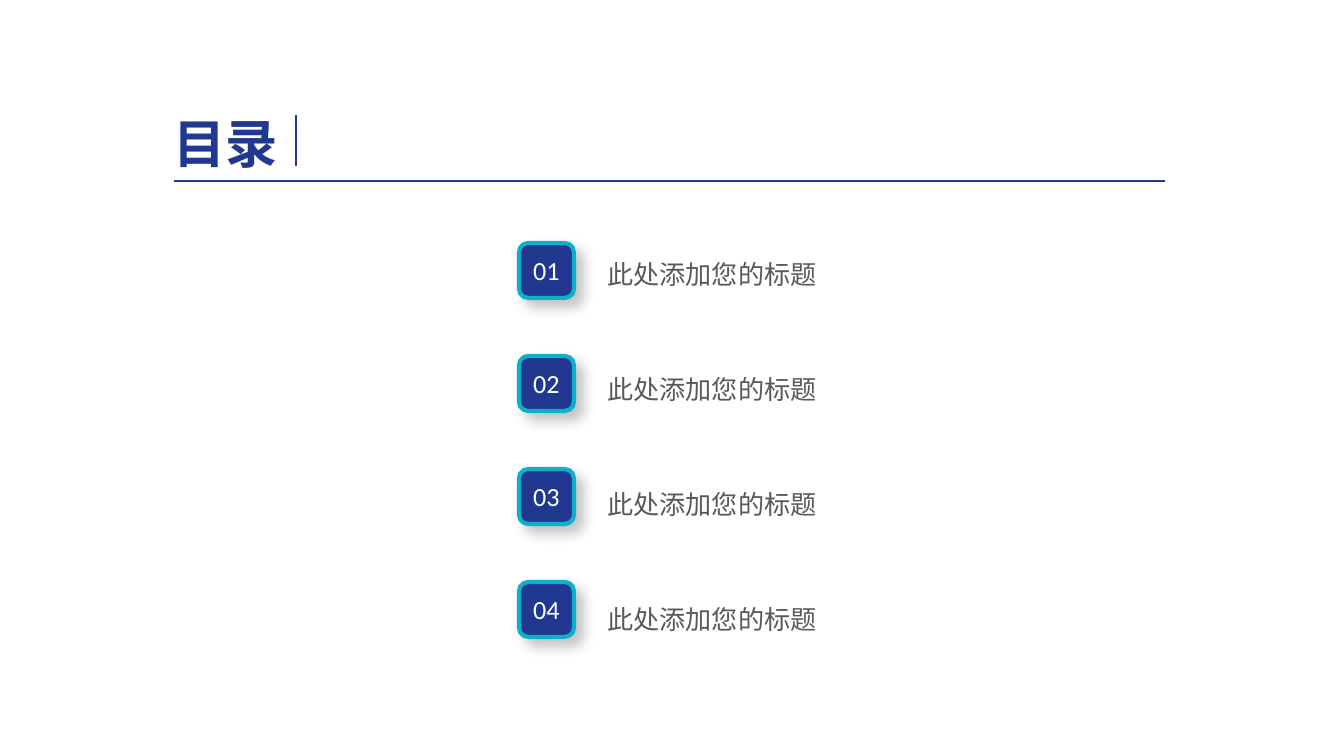
import lxml.etree
import pptx
import pptx.dml.color
import pptx.enum.shapes
import pptx.enum.text
import pptx.oxml.ns
import pptx.util

NAVY = pptx.dml.color.RGBColor(0x20, 0x38, 0x8F)
TEAL = pptx.dml.color.RGBColor(0x0C, 0xB1, 0xC9)
GRAY = pptx.dml.color.RGBColor(0x59, 0x59, 0x59)
WHITE = pptx.dml.color.RGBColor(0xFF, 0xFF, 0xFF)
LATIN_FONT = "Calibri"
CHINESE_FONT = "Noto Sans CJK SC"
EMU_PER_PX = 914400 / 134.4


def px(length):
    return pptx.util.Emu(round(length * EMU_PER_PX))


def add_xml(parent, tag, **attributes):
    return lxml.etree.SubElement(parent, pptx.oxml.ns.qn(tag), attributes)


class ContentsSlide:
    def __init__(self, slide):
        self.slide = slide

    def style(self, paragraph, size, color, font_name, bold=False):
        font = paragraph.font
        font.size = pptx.util.Pt(size)
        font.bold = bold
        font.color.rgb = color
        font.name = font_name
        defaults = paragraph._p.pPr.find(pptx.oxml.ns.qn("a:defRPr"))
        add_xml(defaults, "a:ea", typeface=CHINESE_FONT)

    def rule(self, x1, y1, x2, y2):
        rule = self.slide.shapes.add_connector(
            pptx.enum.shapes.MSO_CONNECTOR.STRAIGHT, px(x1), px(y1), px(x2), px(y2)
        )
        rule.line.color.rgb = NAVY
        rule.line.width = pptx.util.Pt(0.75)
        add_xml(rule.element.spPr, "a:effectLst")

    def text(self, wording, x, y, width, height, size, color, font_name, bold=False):
        box = self.slide.shapes.add_textbox(px(x), px(y), px(width), px(height))
        frame = box.text_frame
        frame.word_wrap = False
        frame.auto_size = pptx.enum.text.MSO_AUTO_SIZE.SHAPE_TO_FIT_TEXT
        frame.text = wording
        self.style(frame.paragraphs[0], size, color, font_name, bold)

    def badge(self, number, x, y, side):
        badge = self.slide.shapes.add_shape(
            pptx.enum.shapes.MSO_SHAPE.ROUNDED_RECTANGLE,
            px(x), px(y), px(side), px(side),
        )
        badge.fill.solid()
        badge.fill.fore_color.rgb = NAVY
        badge.line.color.rgb = TEAL
        badge.line.width = pptx.util.Pt(2.25)
        self.drop_shadow(badge)
        frame = badge.text_frame
        frame.margin_left = frame.margin_right = px(9)
        frame.margin_top = frame.margin_bottom = px(5)
        frame.vertical_anchor = pptx.enum.text.MSO_ANCHOR.MIDDLE
        frame.text = number
        paragraph = frame.paragraphs[0]
        paragraph.alignment = pptx.enum.text.PP_ALIGN.CENTER
        self.style(paragraph, 14, WHITE, LATIN_FONT)

    def drop_shadow(self, badge):
        badge.shadow.inherit = False
        effects = badge.element.spPr.find(pptx.oxml.ns.qn("a:effectLst"))
        shadow = add_xml(
            effects, "a:outerShdw",
            blurRad=str(pptx.util.Pt(7)), dist=str(pptx.util.Pt(5.9)),
            dir="2700000", algn="tl", rotWithShape="0",
        )
        shade = add_xml(shadow, "a:srgbClr", val="000000")
        add_xml(shade, "a:alpha", val="23000")


def main():
    deck = pptx.Presentation()
    deck.slide_width, deck.slide_height = px(1344), px(756)
    contents = ContentsSlide(deck.slides.add_slide(deck.slide_layouts[6]))

    contents.rule(174, 181, 1165, 181)
    contents.text("目录", 160, 105, 133, 77, 28, NAVY, LATIN_FONT, bold=True)
    contents.rule(296, 166, 296, 115)

    for index in range(4):
        contents.badge(f"{index + 1:02}", 519, 243 + 113 * index, 55)
        contents.text(
            "此处添加您的标题", 594, 252 + 115 * index, 238, 46, 14, GRAY, CHINESE_FONT
        )

    deck.save("out.pptx")


if __name__ == "__main__":
    main()
